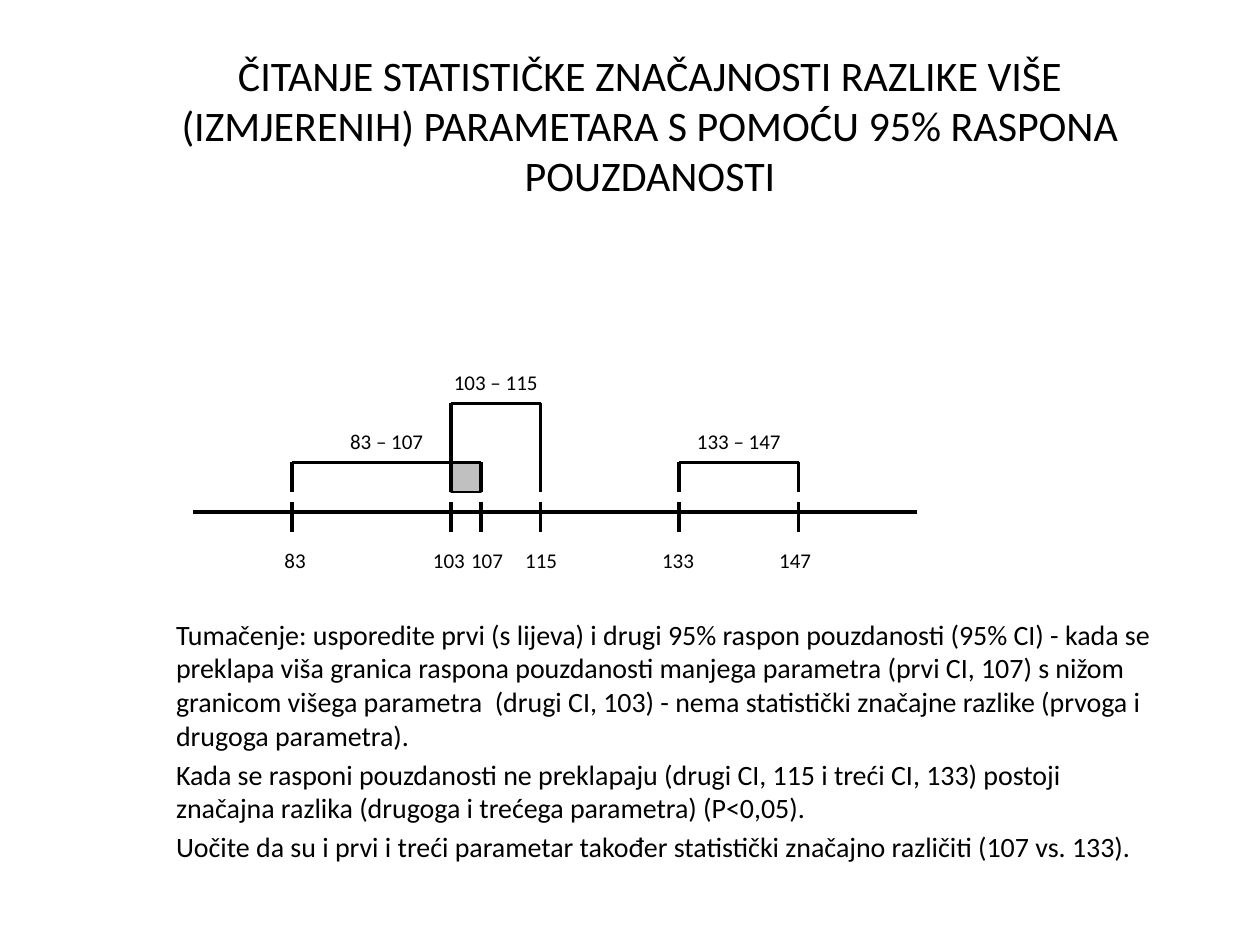
from lxml.etree import SubElement
from pptx import Presentation
from pptx.dml.color import RGBColor
from pptx.enum.shapes import MSO_CONNECTOR as Connector, MSO_SHAPE as Shape
from pptx.enum.text import MSO_ANCHOR as Anchor, PP_ALIGN as Align
from pptx.oxml.ns import qn
from pptx.util import Cm, Pt

BLACK = RGBColor(0, 0, 0)
GREY = RGBColor(0xC0, 0xC0, 0xC0)
FONT = "Calibri"

# Axis value: (tick position, label centre), in cm
TICKS = {
    83: (5.89, 5.95),
    103: (9.09, 9.05),
    107: (9.7, 9.82),
    115: (10.9, 10.91),
    133: (13.69, 13.67),
    147: (16.1, 16.03),
}
# Lower limit, upper limit, height of the bracket's top, in cm
INTERVALS = [(83, 107, 9.32), (103, 115, 8.13), (133, 147, 9.32)]
BRACKET_FOOT = 9.92
AXIS_Y = 10.32
LABELS_LEFT = 5.31
INSET = 0.25

TITLE = ("ČITANJE STATISTIČKE ZNAČAJNOSTI RAZLIKE VIŠE (IZMJERENIH) "
         "PARAMETARA S POMOĆU 95% RASPONA POUZDANOSTI")
EXPLANATION = [
    "Tumačenje: usporedite prvi (s lijeva) i drugi 95% raspon pouzdanosti (95% CI) - "
    "kada se preklapa viša granica raspona pouzdanosti manjega parametra (prvi CI, 107) "
    "s nižom granicom višega parametra  (drugi CI, 103) - nema statistički značajne "
    "razlike (prvoga i drugoga parametra).",
    "Kada se rasponi pouzdanosti ne preklapaju (drugi CI, 115 i treći CI, 133) postoji "
    "značajna razlika (drugoga i trećega parametra) (P<0,05).",
    "Uočite da su i prvi i treći parametar također statistički značajno različiti "
    "(107 vs. 133).",
]


def add_line(page, x1, y1, x2, y2):
    line = page.shapes.add_connector(Connector.STRAIGHT, Cm(x1), Cm(y1), Cm(x2), Cm(y2))
    line.line.color.rgb = BLACK
    line.line.width = Pt(2)
    SubElement(line._element.spPr, qn("a:effectLst"))


def add_text(page, left, top, width, height, paragraphs, size,
             align=Align.LEFT, anchor=Anchor.TOP, gap=0, tabs=()):
    """Add a text box; tabs are centred stops in cm from the text edge."""
    box = page.shapes.add_textbox(Cm(left), Cm(top), Cm(width), Cm(height))
    frame = box.text_frame
    frame_format = {"word_wrap": True, "vertical_anchor": anchor,
                    "margin_left": Cm(INSET), "margin_right": Cm(INSET)}
    for name, value in frame_format.items():
        setattr(frame, name, value)
    for index, text in enumerate(paragraphs):
        para = frame.paragraphs[0] if index == 0 else frame.add_paragraph()
        para.text = text
        para.alignment = align
        if index:
            para.space_before = Pt(gap)
        if tabs:
            stops = SubElement(para._p.get_or_add_pPr(), qn("a:tabLst"))
            for stop in tabs:
                SubElement(stops, qn("a:tab"), pos=str(Cm(stop)), algn="ctr")
        for name, value in {"name": FONT, "size": Pt(size)}.items():
            setattr(para.font, name, value)
        para.font.color.rgb = BLACK


def add_overlap(page):
    """Shade the range shared by the first two intervals."""
    left, right = TICKS[103][0], TICKS[107][0]
    top = INTERVALS[0][2]
    overlap = page.shapes.add_shape(Shape.RECTANGLE, Cm(left), Cm(top),
                                    Cm(right - left), Cm(BRACKET_FOOT - top))
    overlap.shadow.inherit = False
    overlap.fill.solid()
    overlap.fill.fore_color.rgb = GREY
    overlap.line.color.rgb = BLACK
    overlap.line.width = Pt(0.75)


def add_axis(page):
    add_line(page, 3.89, AXIS_Y, 18.49, AXIS_Y)
    for x, _ in TICKS.values():
        add_line(page, x, 10.12, x, 10.72)
    tabs = [centre - LABELS_LEFT - INSET for _, centre in TICKS.values()]
    labels = "".join(f"\t{value}" for value in TICKS)
    add_text(page, LABELS_LEFT, 10.92, 13.59, 0.76, [labels], 12, tabs=tabs)


def add_interval(page, low, high, top):
    left, right = TICKS[low][0], TICKS[high][0]
    for x in (left, right):
        add_line(page, x, top, x, BRACKET_FOOT)
    add_line(page, left, top, right, top)
    width = 2.4
    add_text(page, (left + right - width) / 2, top - 0.8, width, 0.76,
             [f"{low} – {high}"], 12, align=Align.CENTER)


def main():
    deck = Presentation()
    deck.slide_width, deck.slide_height = Cm(25.4), Cm(19.05)
    page = deck.slides.add_slide(deck.slide_layouts[6])
    add_overlap(page)
    add_axis(page)
    for interval in INTERVALS:
        add_interval(page, *interval)
    add_text(page, 2.31, 1.12, 21.59, 2.79, [TITLE], 24,
             align=Align.CENTER, anchor=Anchor.MIDDLE)
    add_text(page, 3.3, 12.32, 20.19, 5.21, EXPLANATION, 16, gap=3.2)
    deck.save("out.pptx")


if __name__ == "__main__":
    main()
